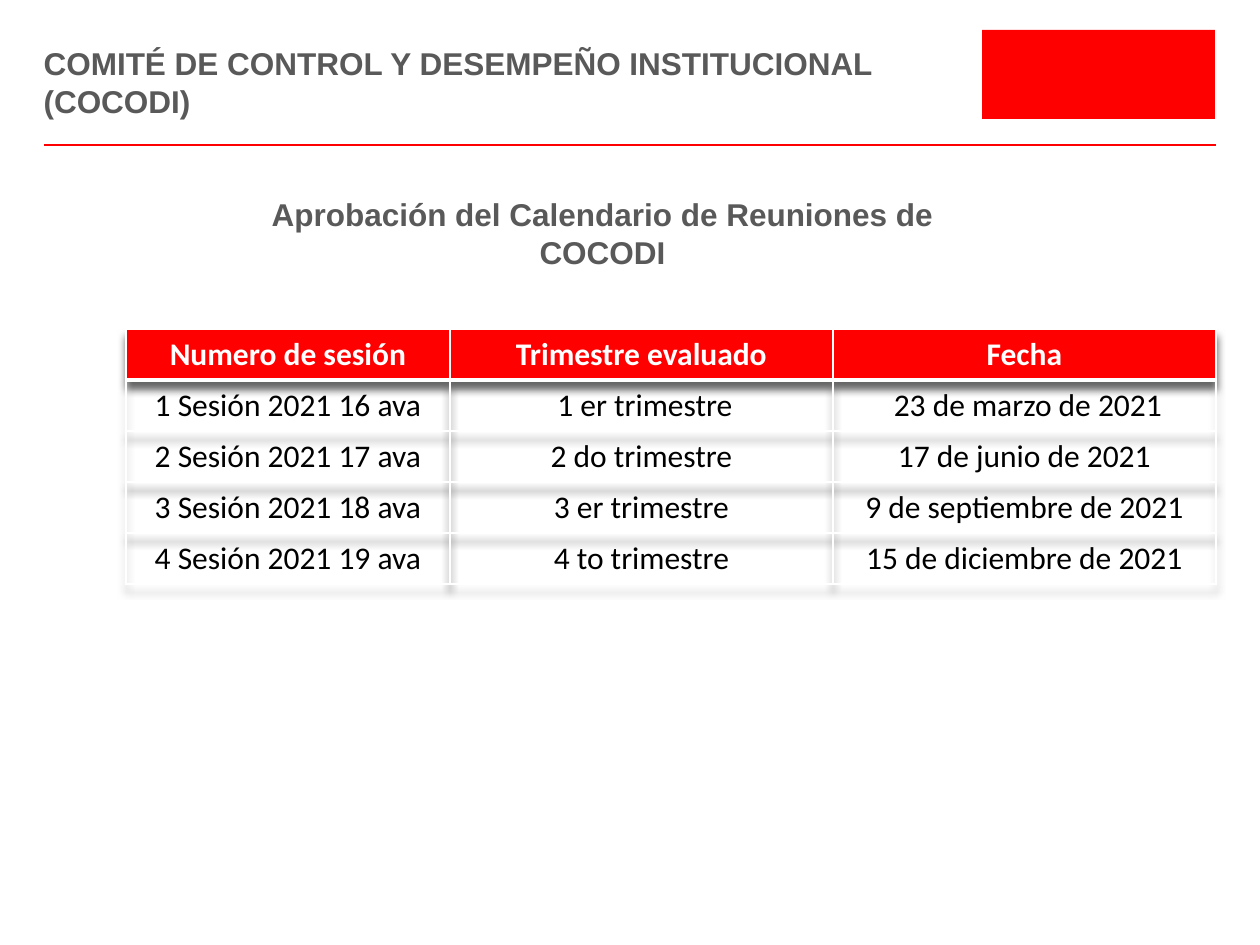
from dataclasses import dataclass

from lxml import etree
from pptx import Presentation
from pptx.dml.color import RGBColor
from pptx.enum.shapes import MSO_CONNECTOR, MSO_SHAPE
from pptx.enum.text import MSO_ANCHOR, MSO_AUTO_SIZE, PP_ALIGN
from pptx.oxml import parse_xml
from pptx.oxml.ns import nsdecls, qn
from pptx.util import Emu, Pt

LEFT, CENTER = PP_ALIGN.LEFT, PP_ALIGN.CENTER
TOP = MSO_ANCHOR.TOP
GROW = MSO_AUTO_SIZE.SHAPE_TO_FIT_TEXT
STRAIGHT = MSO_CONNECTOR.STRAIGHT
RECTANGLE = MSO_SHAPE.RECTANGLE

EMU_PER_PX = 914400 / 126
TITLE_ONLY = 5


@dataclass(frozen=True)
class Theme:
    accent: str = "FF0000"
    heading: str = "595959"
    body: str = "000000"
    light: str = "FFFFFF"
    heading_font: str = "Arial"
    table_font: str = "Calibri"
    size: int = 18
    rule_width: float = 1.5
    border_width: int = 1
    header_border_width: int = 3


THEME = Theme()

SESSIONS = [
    ["Numero de sesión", "Trimestre evaluado", "Fecha"],
    ["1 Sesión 2021 16 ava", " 1 er trimestre", " 23 de marzo de 2021"],
    ["2 Sesión 2021 17 ava", "2 do trimestre", "17 de junio de 2021"],
    ["3 Sesión 2021 18 ava", "3 er trimestre", "9 de septiembre de 2021"],
    ["4 Sesión 2021 19 ava", "4 to trimestre", "15 de diciembre de 2021"],
]


def px(length):
    return Emu(round(length * EMU_PER_PX))


def color(code):
    return RGBColor.from_string(code)


def format_para(para, font, code, bold, align):
    para.alignment = align
    para.font.name = font
    para.font.size = Pt(THEME.size)
    para.font.bold = bold
    para.font.color.rgb = color(code)


def set_heading(box, text, left, top, width, height, align):
    box.left, box.top, box.width, box.height = map(px, (left, top, width, height))
    frame = box.text_frame
    frame.text = text
    frame.word_wrap = True
    frame.auto_size = GROW
    frame.vertical_anchor = TOP
    format_para(frame.paragraphs[0], THEME.heading_font, THEME.heading, True, align)


def add_rule(page, left, right, y):
    rule = page.shapes.add_connector(STRAIGHT, px(left), px(y), px(right), px(y))
    rule.line.color.rgb = color(THEME.accent)
    rule.line.width = Pt(THEME.rule_width)
    etree.SubElement(rule._element.spPr, qn("a:effectLst"))


def add_block(page, left, top, width, height):
    block = page.shapes.add_shape(RECTANGLE, *map(px, (left, top, width, height)))
    block.shadow.inherit = False
    block.fill.solid()
    block.fill.fore_color.rgb = color(THEME.accent)
    block.line.fill.background()


def border_cell(cell, bottom_width):
    """Draw the four borders; they come before the fill in the cell's XML."""
    properties = cell._tc.get_or_add_tcPr()
    for index, side in enumerate("LRTB"):
        width = bottom_width if side == "B" else THEME.border_width
        properties.insert(index, parse_xml(
            f'<a:ln{side} {nsdecls("a")} w="{Pt(width)}"><a:solidFill>'
            f'<a:srgbClr val="{THEME.light}"/></a:solidFill></a:ln{side}>'))


def add_table_shadow(table):
    table._tbl.tblPr.insert(0, parse_xml(
        f'<a:effectLst {nsdecls("a")}>'
        '<a:outerShdw blurRad="50800" dist="50800" dir="5400000" algn="t" rotWithShape="0">'
        '<a:srgbClr val="000000"><a:alpha val="60000"/></a:srgbClr>'
        '</a:outerShdw></a:effectLst>'))


def fill_cell(cell, text, is_header):
    cell.text = text
    code = THEME.light if is_header else THEME.body
    format_para(cell.text_frame.paragraphs[0], THEME.table_font, code, is_header, CENTER)
    if is_header:
        cell.fill.solid()
        cell.fill.fore_color.rgb = color(THEME.accent)
    else:
        cell.fill.background()
    border_cell(cell, THEME.header_border_width if is_header else THEME.border_width)


def add_session_table(page, left, top, column_widths, row_height):
    table = page.shapes.add_table(
        len(SESSIONS), len(column_widths), px(left), px(top),
        px(sum(column_widths)), px(row_height * len(SESSIONS))).table
    table.horz_banding = False
    for column, width in zip(table.columns, column_widths):
        column.width = px(width)
    for row_index, (row, texts) in enumerate(zip(table.rows, SESSIONS)):
        row.height = px(row_height)
        for cell, text in zip(row.cells, texts):
            fill_cell(cell, text, row_index == 0)
    add_table_shadow(table)


def main():
    deck = Presentation()
    deck.slide_width, deck.slide_height = px(1260), px(945)
    page = deck.slides.add_slide(deck.slide_layouts[TITLE_ONLY])

    # Header band
    add_rule(page, 44, 1216, 145)
    set_heading(page.shapes.title,
                "COMITÉ DE CONTROL Y DESEMPEÑO INSTITUCIONAL\v(COCODI)",
                31, 38, 880, 89, LEFT)
    add_block(page, 982, 30, 233, 89)

    # Calendar of sessions
    subtitle = page.shapes.add_textbox(0, 0, 0, 0)
    set_heading(subtitle, "Aprobación del Calendario de Reuniones de COCODI",
                203, 189, 799, 89, CENTER)
    add_session_table(page, 126, 329, [324, 383, 383], 51)

    deck.save("out.pptx")


if __name__ == "__main__":
    main()
